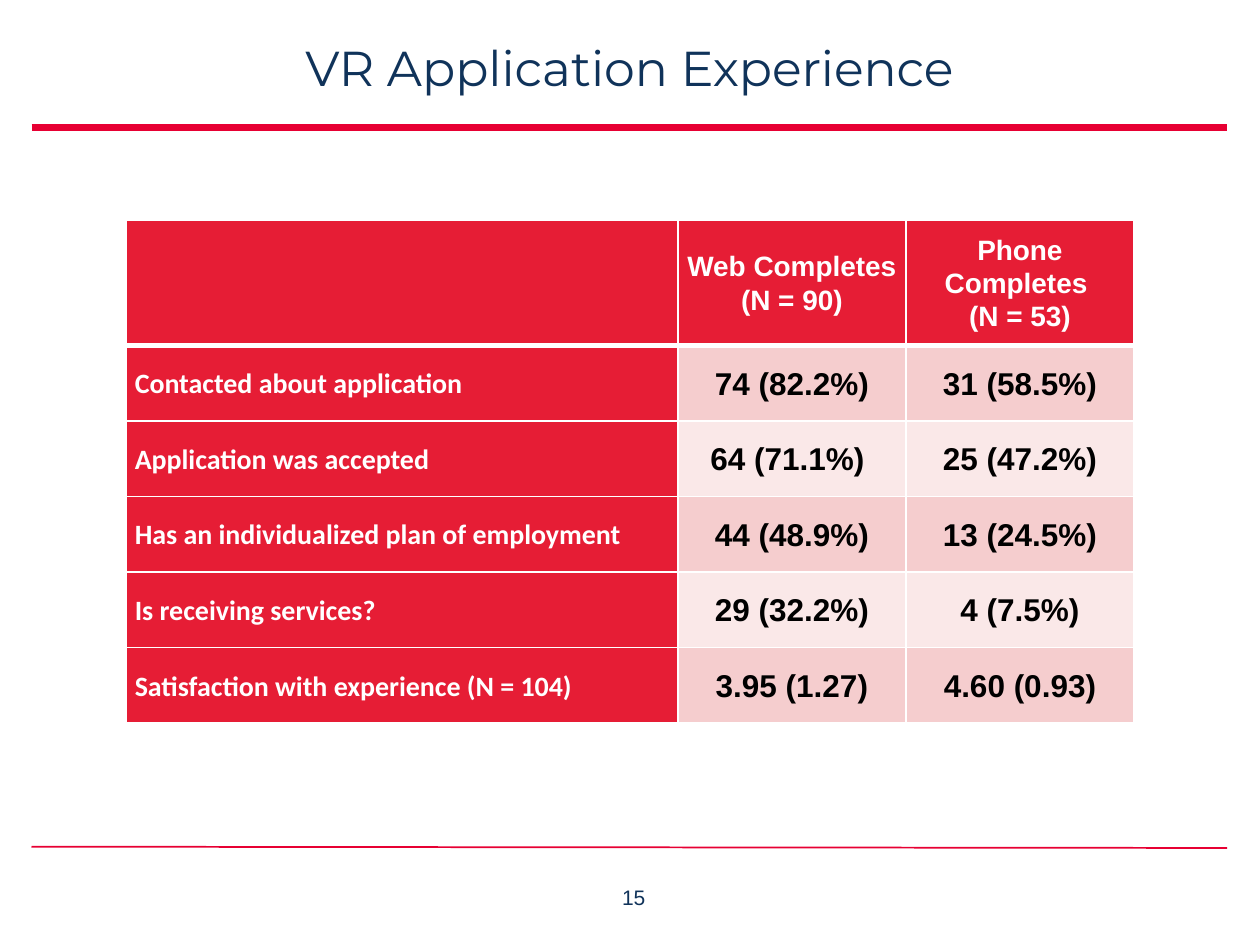
from dataclasses import dataclass

from lxml.etree import SubElement
from pptx import Presentation
from pptx.dml.color import RGBColor
from pptx.enum.shapes import MSO_CONNECTOR
from pptx.enum.text import MSO_ANCHOR, MSO_AUTO_SIZE, PP_ALIGN
from pptx.oxml import parse_xml
from pptx.oxml.ns import nsdecls, qn
from pptx.slide import Slide
from pptx.table import _Cell
from pptx.text.text import TextFrame, _Paragraph
from pptx.util import Inches, Pt


@dataclass(frozen=True)
class TextStyle:
    name: str
    size: float
    color: str
    bold: bool = False
    align: PP_ALIGN = PP_ALIGN.CENTER
    line_spacing: float = 1.0


@dataclass(frozen=True)
class Theme:
    rule: str = "E70033"
    border: str = "FFFFFF"
    header_fill: str = "E61D35"
    band_fills: tuple[str, str] = ("F5CDCE", "FAE8E8")
    title: TextStyle = TextStyle("Montserrat", 28, "10335A")
    page_number: TextStyle = TextStyle("Arial", 12, "10335A")
    heading: TextStyle = TextStyle("Arial", 16, "FFFFFF", True, line_spacing=1.07)
    label: TextStyle = TextStyle("Calibri", 16, "FFFFFF", True, PP_ALIGN.LEFT, 1.07)
    value: TextStyle = TextStyle("Arial", 18, "000000", True, line_spacing=1.07)


@dataclass(frozen=True)
class Rule:
    start_y: float
    end_y: float
    width: float


@dataclass(frozen=True)
class Measure:
    label: str
    web: str
    phone: str


THEME = Theme()
RULES = (Rule(1.01, 1.01, 4), Rule(6.72, 6.73, 1))
HEADINGS = ("", "Web Completes \n(N = 90)", "Phone Completes \n(N = 53)")
MEASURES = (
    Measure("Contacted about application", "74 (82.2%)", "31 (58.5%)"),
    Measure("Application was accepted", "64 (71.1%) ", "25 (47.2%)"),
    Measure("Has an individualized plan of employment", "44 (48.9%)", "13 (24.5%)"),
    Measure("Is receiving services?", "29 (32.2%)", "4 (7.5%)"),
    Measure("Satisfaction with experience (N = 104)", "3.95 (1.27)", "4.60 (0.93)"),
)
COLUMN_WIDTHS = (4.38, 1.81, 1.81)
HEADER_HEIGHT, ROW_HEIGHT = 0.99, 0.6


def format_paragraph(paragraph: _Paragraph, style: TextStyle) -> None:
    paragraph.alignment = style.align
    paragraph.line_spacing = style.line_spacing
    paragraph.space_before = Pt(0)
    font_values = {"name": style.name, "size": Pt(style.size), "bold": style.bold}
    for run in paragraph.runs:
        for attribute, value in font_values.items():
            setattr(run.font, attribute, value)
        run.font.color.rgb = RGBColor.from_string(style.color)


def write_text(frame: TextFrame, text: str, style: TextStyle) -> None:
    frame.text = text
    for paragraph in frame.paragraphs:
        format_paragraph(paragraph, style)


def add_title(slide: Slide, text: str) -> None:
    title = slide.shapes.title
    title.left, title.top = Inches(0.25), Inches(0.3)
    title.width, title.height = Inches(9.49), Inches(0.71)
    frame_values = {
        "margin_left": 0, "margin_top": 0, "margin_right": 0, "margin_bottom": 0,
        "vertical_anchor": MSO_ANCHOR.TOP, "auto_size": MSO_AUTO_SIZE.NONE,
    }
    for attribute, value in frame_values.items():
        setattr(title.text_frame, attribute, value)
    write_text(title.text_frame, text, THEME.title)


def add_rule(slide: Slide, rule: Rule) -> None:
    connector = slide.shapes.add_connector(
        MSO_CONNECTOR.STRAIGHT,
        Inches(0.25), Inches(rule.start_y), Inches(9.74), Inches(rule.end_y),
    )
    connector.line.color.rgb = RGBColor.from_string(THEME.rule)
    connector.line.width = Pt(rule.width)
    SubElement(connector._element.spPr, qn("a:effectLst"))


def add_page_number(slide: Slide, number: str) -> None:
    box = slide.shapes.add_textbox(Inches(4.53), Inches(6.97), Inches(1), Inches(0.38))
    box.text_frame.word_wrap = False
    write_text(box.text_frame, number, THEME.page_number)


def set_borders(cell: _Cell, top: float, bottom: float) -> None:
    """Draw all four sides; the side lines must come before the cell's fill."""
    properties = cell._tc.get_or_add_tcPr()
    widths = {"lnL": 1, "lnR": 1, "lnT": top, "lnB": bottom}
    for index, (tag, width) in enumerate(widths.items()):
        properties.insert(index, parse_xml(
            f'<a:{tag} {nsdecls("a")} w="{Pt(width)}"><a:solidFill>'
            f'<a:srgbClr val="{THEME.border}"/></a:solidFill></a:{tag}>'
        ))


def fill_cell(cell: _Cell, text: str, style: TextStyle, fill: str) -> None:
    cell_values = {
        "margin_left": Inches(0.07), "margin_right": Inches(0.07),
        "margin_top": 0, "margin_bottom": 0, "vertical_anchor": MSO_ANCHOR.MIDDLE,
    }
    for attribute, value in cell_values.items():
        setattr(cell, attribute, value)
    cell.fill.solid()
    cell.fill.fore_color.rgb = RGBColor.from_string(fill)
    write_text(cell.text_frame, text, style)


def add_measure_table(slide: Slide) -> None:
    rows = [HEADINGS] + [(item.label, item.web, item.phone) for item in MEASURES]
    heights = [HEADER_HEIGHT] + [ROW_HEIGHT] * len(MEASURES)
    table = slide.shapes.add_table(
        len(rows), len(COLUMN_WIDTHS), Inches(1), Inches(1.75),
        Inches(sum(COLUMN_WIDTHS)), Inches(sum(heights)),
    ).table
    for column, width in zip(table.columns, COLUMN_WIDTHS):
        column.width = Inches(width)
    for row_index, (texts, height) in enumerate(zip(rows, heights)):
        table.rows[row_index].height = Inches(height)
        for column_index, text in enumerate(texts):
            if row_index == 0:
                style, fill = THEME.heading, THEME.header_fill
            elif column_index == 0:
                style, fill = THEME.label, THEME.header_fill
            else:
                style, fill = THEME.value, THEME.band_fills[(row_index - 1) % 2]
            cell = table.cell(row_index, column_index)
            fill_cell(cell, text, style, fill)
            set_borders(cell, top=3 if row_index == 1 else 1, bottom=3 if row_index == 0 else 1)


def main() -> None:
    presentation = Presentation()
    presentation.slide_width, presentation.slide_height = Inches(10), Inches(7.5)
    slide = presentation.slides.add_slide(presentation.slide_layouts.get_by_name("Title Only"))
    for rule in RULES:
        add_rule(slide, rule)
    add_page_number(slide, "15")
    add_title(slide, "VR Application Experience")
    add_measure_table(slide)
    presentation.save("out.pptx")


if __name__ == "__main__":
    main()
